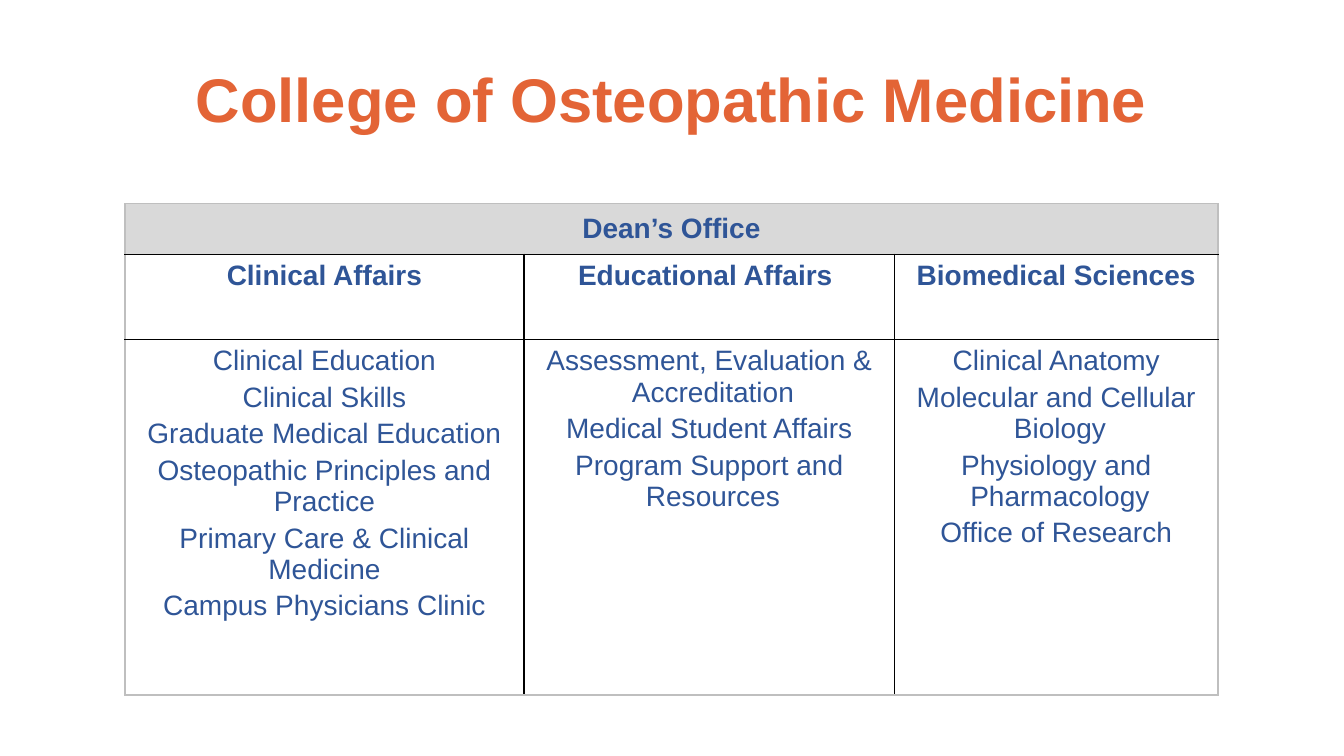
import pptx
import pptx.dml.color
import pptx.enum.text
import pptx.oxml
import pptx.oxml.ns
import pptx.util

PX = 9525
ORANGE = pptx.dml.color.RGBColor(0xE3, 0x64, 0x36)
BLUE = pptx.dml.color.RGBColor(0x2F, 0x55, 0x97)
BLACK = pptx.dml.color.RGBColor(0, 0, 0)
BORDER_GRAY = pptx.dml.color.RGBColor(0xBF, 0xBF, 0xBF)
HEADER_GRAY = pptx.dml.color.RGBColor(0xD9, 0xD9, 0xD9)
CENTER = pptx.enum.text.PP_ALIGN.CENTER
MIDDLE = pptx.enum.text.MSO_ANCHOR.MIDDLE
TOP = pptx.enum.text.MSO_ANCHOR.TOP

COLUMN_WIDTHS = [380, 353, 308]
ROW_HEIGHTS = [48, 81, 339]
CELL_MARGINS = {"margin_left": 11, "margin_right": 11, "margin_top": 6, "margin_bottom": 6}
LIST_INDENTS = [(0, -23), (7, -18), (7, -18)]
OFFICE = "Dean’s Office"
DIVISIONS = ["Clinical Affairs", "Educational Affairs ", "Biomedical Sciences"]
DEPARTMENTS = [
    ["Clinical Education", "Clinical Skills", "Graduate Medical Education",
     "Osteopathic Principles and Practice", "Primary Care & Clinical Medicine",
     "Campus Physicians Clinic"],
    ["Assessment, Evaluation & Accreditation", "Medical Student Affairs",
     "Program Support and Resources"],
    ["Clinical Anatomy", "Molecular and Cellular Biology",
     "Physiology and Pharmacology", "Office of Research"],
]


def write_lines(frame, lines, size, color, bold, indent=None):
    """Fill a text frame with centred paragraphs."""
    for index, line in enumerate(lines):
        para = frame.paragraphs[0] if index == 0 else frame.add_paragraph()
        para.alignment = CENTER
        if indent:
            properties = para._p.get_or_add_pPr()
            for name, length in zip(("marL", "indent"), indent):
                properties.set(name, str(length * PX))
        if index:
            para.space_before = pptx.util.Pt(3.8)
        span = para.add_run()
        span.text = line
        formats = {"name": "Arial", "size": pptx.util.Pt(size), "bold": bold}
        for name, value in formats.items():
            setattr(span.font, name, value)
        span.font.color.rgb = color


def style_cell(cell, edge_colors, fill, anchor):
    """Set the borders, fill, margins and anchor of a cell."""
    properties = cell._tc.get_or_add_tcPr()
    for side, color in zip("LRTB", edge_colors):
        properties.append(pptx.oxml.parse_xml(
            f'<a:ln{side} {pptx.oxml.ns.nsdecls("a")} w="12700"><a:solidFill>'
            f'<a:srgbClr val="{color}"/></a:solidFill></a:ln{side}>'))
    if fill is None:
        cell.fill.background()
    else:
        cell.fill.solid()
        cell.fill.fore_color.rgb = fill
    for name, length in CELL_MARGINS.items():
        setattr(cell, name, length * PX)
    cell.vertical_anchor = anchor


def add_title(page, left, top, width, height):
    """Place the heading in the title placeholder."""
    title = page.shapes.title
    box = {"left": left, "top": top, "width": width, "height": height}
    for name, length in box.items():
        setattr(title, name, length * PX)
    title.text_frame.vertical_anchor = MIDDLE
    write_lines(title.text_frame, ["College of Osteopathic Medicine"], 44, ORANGE, True)
    title.text_frame.paragraphs[0].line_spacing = 0.9


def add_office_table(page, left, top):
    """Add the table of divisions and departments at the given corner."""
    last_row, last_column = len(ROW_HEIGHTS) - 1, len(COLUMN_WIDTHS) - 1
    table = page.shapes.add_table(
        last_row + 1, last_column + 1, left * PX, top * PX,
        sum(COLUMN_WIDTHS) * PX, sum(ROW_HEIGHTS) * PX).table
    table.first_row = False
    table.horz_banding = False
    for column, width in zip(table.columns, COLUMN_WIDTHS):
        column.width = width * PX
    for row, height in zip(table.rows, ROW_HEIGHTS):
        row.height = height * PX
    table.cell(0, 0).merge(table.cell(0, last_column))
    for row in range(last_row + 1):
        for column in range(last_column + 1):
            outer = (row == 0 or column == 0, row == 0 or column == last_column,
                     row == 0, row == last_row)
            edge_colors = [BORDER_GRAY if edge else BLACK for edge in outer]
            style_cell(table.cell(row, column), edge_colors,
                       None if row else HEADER_GRAY, TOP if row else MIDDLE)
    write_lines(table.cell(0, 0).text_frame, [OFFICE], 20, BLUE, True)
    for column, division in enumerate(DIVISIONS):
        write_lines(table.cell(1, column).text_frame, [division], 20, BLUE, True)
        write_lines(table.cell(2, column).text_frame, DEPARTMENTS[column], 20, BLUE,
                    False, LIST_INDENTS[column])


def main():
    """Build and save the deck."""
    deck = pptx.Presentation()
    deck.slide_width = 1280 * PX
    deck.slide_height = 720 * PX
    page = deck.slides.add_slide(deck.slide_layouts[5])
    add_title(page, 88, 19, 1104, 158)
    add_office_table(page, 119, 194)
    deck.save("out.pptx")


if __name__ == "__main__":
    main()
